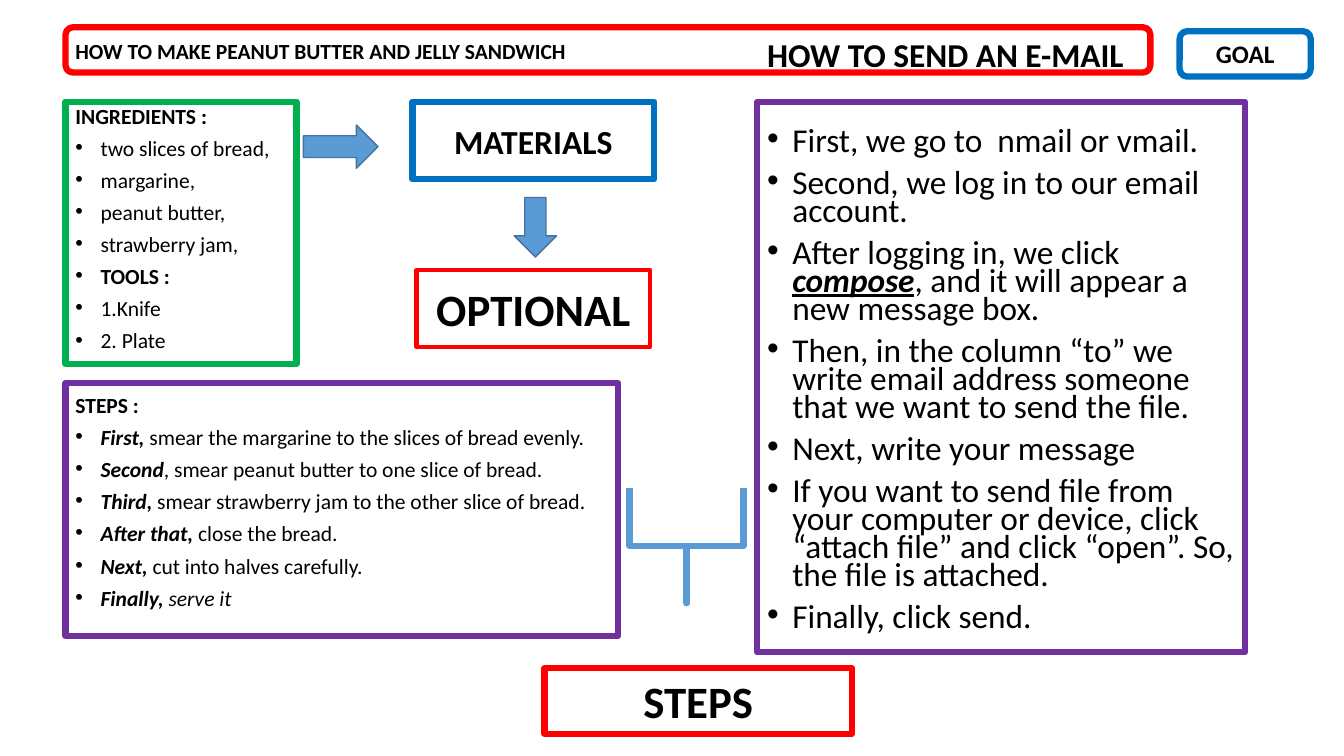
"""Build a slide comparing two procedure texts, with labels for their parts."""
from pptx import Presentation
from pptx.dml.color import RGBColor
from pptx.enum.shapes import MSO_SHAPE
from pptx.enum.text import MSO_ANCHOR, PP_ALIGN
from pptx.util import Inches, Pt
from lxml.etree import SubElement
from pptx.oxml.ns import qn

COLORS = {"black": "000000", "white": "FFFFFF", "red": "FF0000", "blue": "0070C0",
          "green": "00B050", "purple": "7030A0", "sky": "5B9BD5", "edge": "43739E"}

SANDWICH = [
    ("head", [("HOW TO MAKE PEANUT BUTTER AND JELLY SANDWICH", "b")]),
    ("section", [("INGREDIENTS :", "b")]),
    ("item", [("two slices of bread,", "")]),
    ("item", [("margarine,", "")]),
    ("item", [("peanut butter,", "")]),
    ("item", [("strawberry jam,", "")]),
    ("item", [("TOOLS :", "b")]),
    ("item", [("1.Knife", "")]),
    ("item", [("2. Plate", "")]),
    ("section", [("STEPS :", "b")]),
    ("item", [("First,", "bi"), (" smear the margarine to the slices of bread evenly.", "")]),
    ("item", [("Second", "bi"), (", smear peanut butter to one slice of bread.", "")]),
    ("item", [("Third, ", "bi"), ("smear strawberry jam to the other slice of bread.", "")]),
    ("item", [("After that,", "bi"), (" close the bread.", "")]),
    ("item", [("Next, ", "bi"), ("cut into halves carefully.", "")]),
    ("item", [("Finally,", "bi"), (" serve it", "i")]),
]
EMAIL = [
    ("head", [("HOW TO SEND AN E-MAIL", "b")]),
    ("first item", [("First, we go to  nmail or vmail.", "")]),
    ("item", [("Second, we log in to our email account.", "")]),
    ("item", [("After logging in, we click ", ""), ("compose", "biu"),
              (", and it will appear a new message box.", "")]),
    ("item", [("Then, in the column “to” we write email address someone "
               "that we want to send the file.", "")]),
    ("item", [("Next, write your message", "")]),
    ("item", [("If you want to send file from your computer or device, click "
               "“attach file” and click “open”. So, the file is attached.", "")]),
    ("item", [("Finally, click send.", "")]),
]

LEFT, RIGHT, TOP, TEXT_TOP, TEXT_H = 0.65, 7.51, 1.01, 0.4, 6.62
TEXTS = [(SANDWICH, LEFT, 6.06, 15.4), (EMAIL, RIGHT, 4.85, 23.8)]
ROUND, RECT = MSO_SHAPE.ROUNDED_RECTANGLE, MSO_SHAPE.RECTANGLE
FRAMES = [
    (ROUND, (LEFT, 0.27, 10.76, 0.45), None, "red", 4.5, None),
    (ROUND, (11.7, 0.31, 1.3, 0.45), None, "blue", 4.5, ("GOAL", 18)),
    (RECT, (LEFT, TOP, 2.29, 2.6), None, "green", 4.5, None),
    (MSO_SHAPE.RIGHT_ARROW, (3.01, 1.24, 0.74, 0.43), "sky", "edge", 1, None),
    (RECT, (4.09, TOP, 2.4, 0.77), None, "blue", 4.5, ("MATERIALS", 24)),
    (MSO_SHAPE.DOWN_ARROW, (5.1, 1.96, 0.42, 0.59), "sky", "edge", 1, None),
    (RECT, (4.13, 2.68, 2.32, 0.76), "white", "red", 3, ("OPTIONAL", 32)),
    (RECT, (LEFT, 3.8, 5.48, 2.51), None, "purple", 4.5, None),
    (RECT, (RIGHT, TOP, 4.84, 5.46), None, "purple", 4.5, None),
    (RECT, (5.4, 6.63, 3.05, 0.65), None, "red", 4.5, ("STEPS", 32)),
]
BRACE = (MSO_SHAPE.RIGHT_BRACE, (6.24, 4.85, 1.14, 1.13), None, "sky", 4.5, None)
LINE_SPACING, GAP, LINE_HEIGHT = 0.7, 10, 1.22


def color(name):
    return RGBColor.from_string(COLORS[name])


def write(p, runs, size, align=PP_ALIGN.LEFT, before=0, spacing=1.0, bullet=False):
    p.alignment, p.space_before, p.line_spacing = align, Pt(before), spacing
    if bullet:
        pPr = p._p.get_or_add_pPr()
        pPr.set("marL", str(Inches(0.25)))
        pPr.set("indent", str(-Inches(0.25)))
        SubElement(pPr, qn("a:buFont")).set("typeface", "Arial")
        SubElement(pPr, qn("a:buChar")).set("char", "•")
    for text, style in runs:
        r = p.add_run()
        r.text = text
        r.font.name, r.font.size = "Calibri", Pt(size)
        r.font.color.rgb = color("black")
        r.font.bold, r.font.italic, r.font.underline = (c in style for c in "biu")


def add_text(s, paragraphs, left, width, size):
    tf = s.shapes.add_textbox(*map(Inches, (left, TEXT_TOP, width, TEXT_H))).text_frame
    tf.word_wrap = True
    wide_gap = 2 * GAP + size * LINE_HEIGHT * LINE_SPACING
    for i, (role, runs) in enumerate(paragraphs):
        p = tf.add_paragraph() if i else tf.paragraphs[0]
        before = wide_gap if role in ("section", "first item") else GAP
        write(p, runs, size, before=before, spacing=LINE_SPACING, bullet="item" in role)


def add_frame(s, kind, box, fill, line, weight, label):
    sp = s.shapes.add_shape(kind, *map(Inches, box))
    sp.shadow.inherit = False
    if fill:
        sp.fill.solid()
        sp.fill.fore_color.rgb = color(fill)
    else:
        sp.fill.background()
    sp.line.color.rgb, sp.line.width = color(line), Pt(weight)
    if label:
        text, size = label
        sp.text_frame.vertical_anchor = MSO_ANCHOR.MIDDLE
        write(sp.text_frame.paragraphs[0], [(text, "b")], size, align=PP_ALIGN.CENTER)
    return sp


def main():
    prs = Presentation()
    prs.slide_width, prs.slide_height = Inches(13.33), Inches(7.5)
    s = prs.slides.add_slide(prs.slide_layouts[6])
    for text in TEXTS:
        add_text(s, *text)
    for frame in FRAMES:
        add_frame(s, *frame)
    brace = add_frame(s, *BRACE)
    brace.rotation = 90
    brace.adjustments[0], brace.adjustments[1] = 0, 0.5
    prs.save("out.pptx")


if __name__ == "__main__":
    main()
